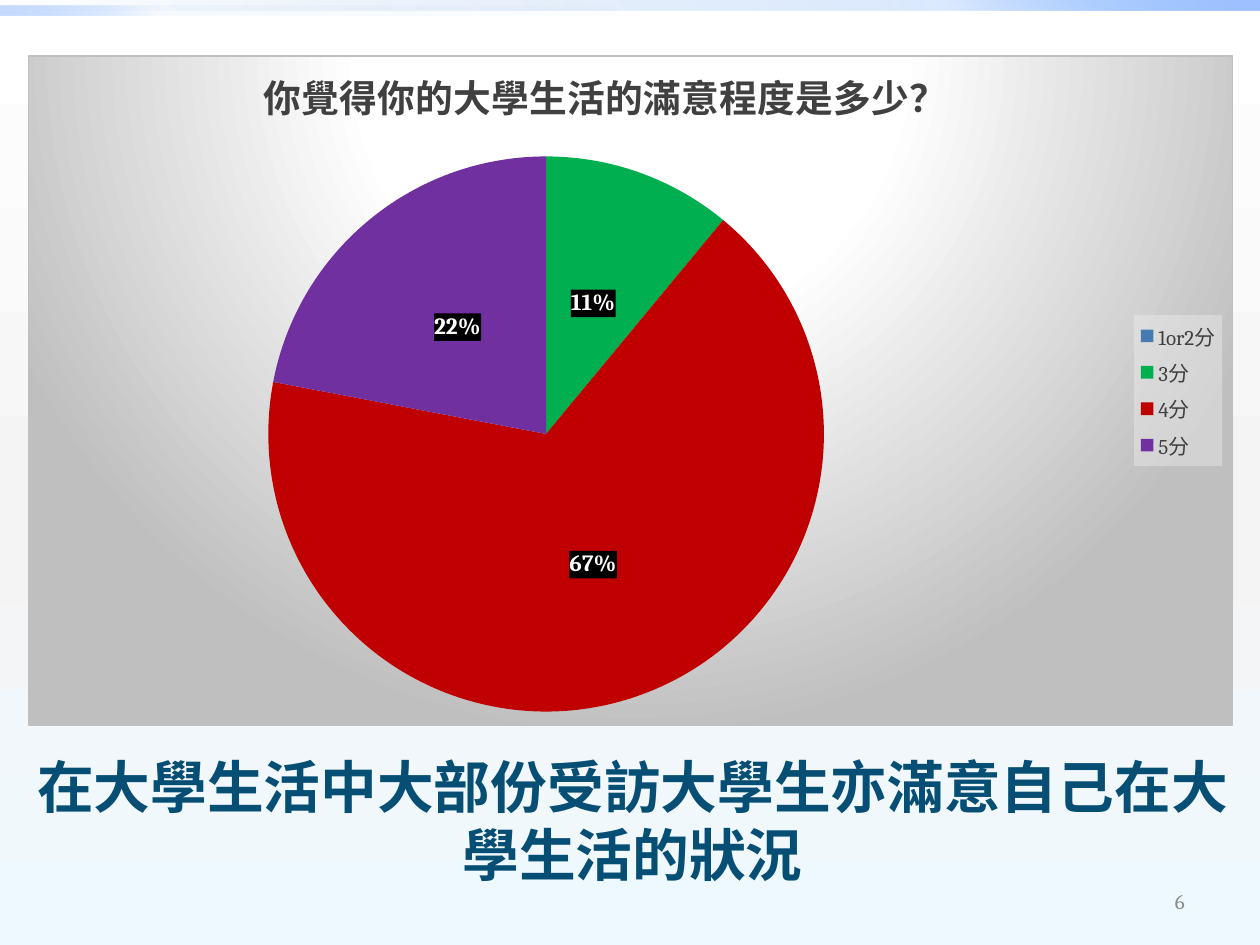
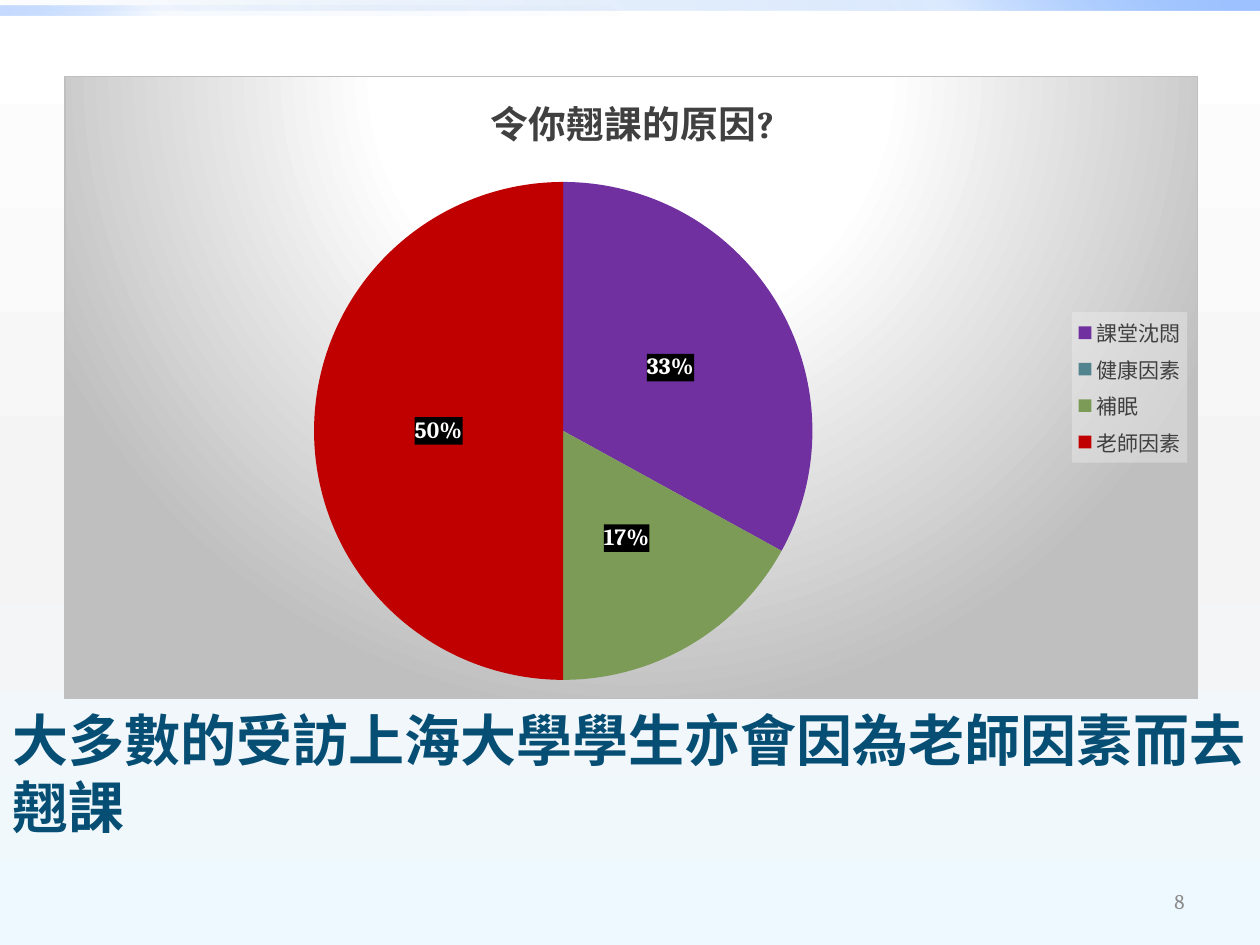
from dataclasses import dataclass

from pptx import Presentation
from pptx import util as u
from pptx.chart import data as chart_data
from pptx.dml.color import RGBColor
from pptx.enum import chart as chart_enum, shapes, text
from pptx.oxml import parse_xml
from pptx.oxml.ns import nsdecls, qn


@dataclass(frozen=True)
class Theme:
    heading_font: str = "Calibri"
    body_font: str = "Cambria"
    headline: str = "064E74"
    chart_text: str = "404040"
    page_text: str = "8C8C8C"
    border: str = "BFBFBF"
    label_text: str = "FFFFFF"
    label_box: str = "000000"
    legend_box: str = "F2F2F2"
    blue: str = "477AB1"
    teal: str = "51848E"
    green: str = "00B050"
    olive: str = "7B9B57"
    purple: str = "7030A0"
    red: str = "C00000"
    chart_title_size: float = 21.6
    label_size: float = 13.3
    small_size: float = 12
    chart_size: float = 10
    backdrop: tuple = ((0, "FFFFFF", 100), (55, "F4F4F4", 100), (100, "EEF9FF", 100))
    upper_band: tuple = ((0, "0058B7", 0), (75, "4F95FF", 20), (100, "9EC2FF", 100))
    lower_band: tuple = ((0, "0058B7", 0), (75, "4F95FF", 5), (100, "9EC2FF", 60))
    spotlight: tuple = ((0, "FFFFFF", 100), (39, "FFFFFF", 100), (100, "BFBFBF", 100))


THEME = Theme()
SLIDE_WIDTH, SLIDE_HEIGHT = 720, 540
BAND_HEIGHT = 6
PAGE_NUMBER_BOX = (516, 500.4, 168, 28.8)
SPOTLIGHT_SHAPE = ('<a:path path="circle"><a:fillToRect l="50000" t="-80000" '
                   'r="50000" b="180000"/></a:path>')

SURVEYS = (
    dict(page=6,
         headline=dict(box=(1.4, 415.4, 720, 105.8),
                       wording="在大學生活中大部份受訪大學生亦滿意自己在大學生活的狀況",
                       font_name=THEME.heading_font, size=32.4,
                       align=text.PP_ALIGN.CENTER, anchor=text.MSO_ANCHOR.MIDDLE),
         pie=dict(box=(15.8, 31.7, 689, 383),
                  question="你覺得你的大學生活的滿意程度是多少？",
                  question_at=dict(x=0.19, y=0),
                  circle_at=dict(x=0.19, y=0.15, w=0.48, h=0.83),
                  answers=(("1or2分", 0, THEME.blue), ("3分", 11, THEME.green),
                           ("4分", 67, THEME.red), ("5分", 22, THEME.purple)))),
    dict(page=8,
         headline=dict(box=(0, 399.6, 745.2, 85),
                       wording="大多數的受訪上海大學學生亦會因為老師因素而去翹課",
                       font_name=THEME.body_font, size=32,
                       align=text.PP_ALIGN.LEFT, anchor=text.MSO_ANCHOR.TOP),
         pie=dict(box=(36.7, 43.2, 648, 356.4),
                  question="令你翹課的原因?",
                  question_at=dict(x=0.37, y=0.01),
                  circle_at=dict(x=0.22, y=0.17, w=0.44, h=0.8),
                  answers=(("課堂沈悶", 33, THEME.purple), ("健康因素", 0, THEME.teal),
                           ("補眠", 17, THEME.olive), ("老師因素", 50, THEME.red)))),
)


def points(box):
    return [u.Pt(length) for length in box]


def style_font(font, name, size, color, bold=False):
    font.name, font.size, font.bold = name, u.Pt(size), bold
    font.color.rgb = RGBColor.from_string(color)


def color_xml(color, alpha):
    return f'<a:srgbClr val="{color}"><a:alpha val="{alpha * 1000}"/></a:srgbClr>'


def solid_xml(color, alpha=100):
    return f"<a:solidFill>{color_xml(color, alpha)}</a:solidFill>"


def gradient_xml(stops, direction):
    marks = "".join(f'<a:gs pos="{position * 1000}">{color_xml(color, alpha)}</a:gs>'
                    for position, color, alpha in stops)
    return (f'<a:gradFill {nsdecls("a")} rotWithShape="1"><a:gsLst>{marks}</a:gsLst>'
            f'{direction}</a:gradFill>')


def apply_linear_gradient(fill, owner, stops, angle):
    fill.gradient()
    default = owner.find(".//" + qn("a:gradFill"))
    direction = f'<a:lin ang="{angle * 60000}" scaled="0"/>'
    default.getparent().replace(default, parse_xml(gradient_xml(stops, direction)))


def chart_paint(content):
    return parse_xml(f'<c:spPr {nsdecls("c", "a")}>{content}</c:spPr>')


def paint_box(part, color, alpha=100):
    part.find(qn("c:txPr")).addprevious(chart_paint(solid_xml(color, alpha)))


def chart_layout(fractions, target=""):
    modes = '<c:xMode val="edge"/><c:yMode val="edge"/>'
    values = "".join(f'<c:{key} val="{value}"/>' for key, value in fractions.items())
    return parse_xml(f'<c:layout {nsdecls("c")}><c:manualLayout>{target}{modes}{values}'
                     '</c:manualLayout></c:layout>')


def drop_layout(part):
    for layout in part.findall(qn("c:layout")):
        part.remove(layout)


def add_bands(slide):
    bands = ((0, SLIDE_WIDTH, THEME.upper_band, 315),
             (BAND_HEIGHT / 2, SLIDE_WIDTH / 2, THEME.lower_band, 135))
    for top, width, stops, angle in bands:
        band = slide.shapes.add_shape(shapes.MSO_SHAPE.RECTANGLE,
                                      *points((0, top, width, BAND_HEIGHT)))
        band.shadow.inherit = False
        band.line.fill.background()
        apply_linear_gradient(band.fill, band.element, stops, angle)


def add_headline(slide, box, wording, font_name, size, align, anchor):
    headline = slide.shapes.title
    headline.left, headline.top, headline.width, headline.height = points(box)
    frame = headline.text_frame
    frame.text = wording
    frame.word_wrap = True
    frame.auto_size = text.MSO_AUTO_SIZE.NONE
    frame.vertical_anchor = anchor
    paragraph = frame.paragraphs[0]
    paragraph.alignment = align
    style_font(paragraph.runs[0].font, font_name, size, THEME.headline, True)


def add_page_number(slide, box, number):
    frame = slide.shapes.add_textbox(*points(box)).text_frame
    frame.text = str(number)
    frame.word_wrap = True
    frame.vertical_anchor = text.MSO_ANCHOR.MIDDLE
    paragraph = frame.paragraphs[0]
    paragraph.alignment = text.PP_ALIGN.RIGHT
    style_font(paragraph.runs[0].font, THEME.body_font, THEME.small_size, THEME.page_text)


def color_slices(pie, answers):
    pie.plots[0].vary_by_categories = True
    series = pie.plots[0].series[0]
    for index, (_, _, color) in enumerate(answers):
        fill = series.points[index].format.fill
        fill.solid()
        fill.fore_color.rgb = RGBColor.from_string(color)


def label_slices(pie, answers):
    labels = pie.plots[0].series[0].data_labels
    labels.show_value, labels.show_percentage = False, True
    labels.number_format, labels.number_format_is_linked = "0%", False
    labels.position = chart_enum.XL_LABEL_POSITION.CENTER
    style_font(labels.font, THEME.body_font, THEME.label_size, THEME.label_text, True)

    label_part = pie.element.find(f'.//{qn("c:ser")}/{qn("c:dLbls")}')
    paint_box(label_part, THEME.label_box)
    empty_slices = [index for index, (_, share, _) in enumerate(answers) if share == 0]
    for place, index in enumerate(empty_slices):
        label_part.insert(place, parse_xml(
            f'<c:dLbl {nsdecls("c")}><c:idx val="{index}"/><c:delete val="1"/></c:dLbl>'))


def add_question(pie, question, question_at):
    pie.has_title = True
    frame = pie.chart_title.text_frame
    frame.text = question
    style_font(frame.paragraphs[0].runs[0].font, THEME.body_font,
               THEME.chart_title_size, THEME.chart_text, True)
    title_part = pie.element.find(".//" + qn("c:title"))
    drop_layout(title_part)
    title_part.find(qn("c:tx")).addnext(chart_layout(question_at))


def add_legend(pie):
    pie.has_legend = True
    pie.legend.position = chart_enum.XL_LEGEND_POSITION.RIGHT
    pie.legend.include_in_layout = False
    style_font(pie.legend.font, THEME.body_font, THEME.small_size, THEME.chart_text)
    paint_box(pie.element.find(".//" + qn("c:legend")), THEME.legend_box, 39)


def place_circle(pie, circle_at):
    plot_area = pie.element.find(".//" + qn("c:plotArea"))
    drop_layout(plot_area)
    plot_area.insert(0, chart_layout(circle_at, '<c:layoutTarget val="inner"/>'))


def paint_chart_area(pie):
    chart_part = pie.element.find(qn("c:chart"))
    border = f'<a:ln w="{u.Pt(0.75)}">{solid_xml(THEME.border)}</a:ln>'
    chart_part.addprevious(parse_xml(f'<c:roundedCorners {nsdecls("c")} val="0"/>'))
    chart_part.addnext(chart_paint(gradient_xml(THEME.spotlight, SPOTLIGHT_SHAPE) + border))


def add_survey_pie(slide, box, question, question_at, circle_at, answers):
    survey = chart_data.CategoryChartData()
    survey.categories = [answer for answer, _, _ in answers]
    survey.add_series("Series 1", [share for _, share, _ in answers])
    pie = slide.shapes.add_chart(chart_enum.XL_CHART_TYPE.PIE, *points(box), survey).chart
    style_font(pie.font, THEME.body_font, THEME.chart_size, THEME.label_box)
    color_slices(pie, answers)
    label_slices(pie, answers)
    add_question(pie, question, question_at)
    add_legend(pie)
    place_circle(pie, circle_at)
    paint_chart_area(pie)


def add_survey_slide(deck, page, headline, pie):
    title_only = deck.slide_layouts[5]
    slide = deck.slides.add_slide(title_only)
    add_bands(slide)
    add_headline(slide, **headline)
    add_survey_pie(slide, **pie)
    add_page_number(slide, PAGE_NUMBER_BOX, page)


def main():
    deck = Presentation()
    deck.slide_width, deck.slide_height = points((SLIDE_WIDTH, SLIDE_HEIGHT))
    master = deck.slide_master
    apply_linear_gradient(master.background.fill, master.element, THEME.backdrop, 90)
    for survey in SURVEYS:
        add_survey_slide(deck, **survey)
    deck.save("out.pptx")


if __name__ == "__main__":
    main()
